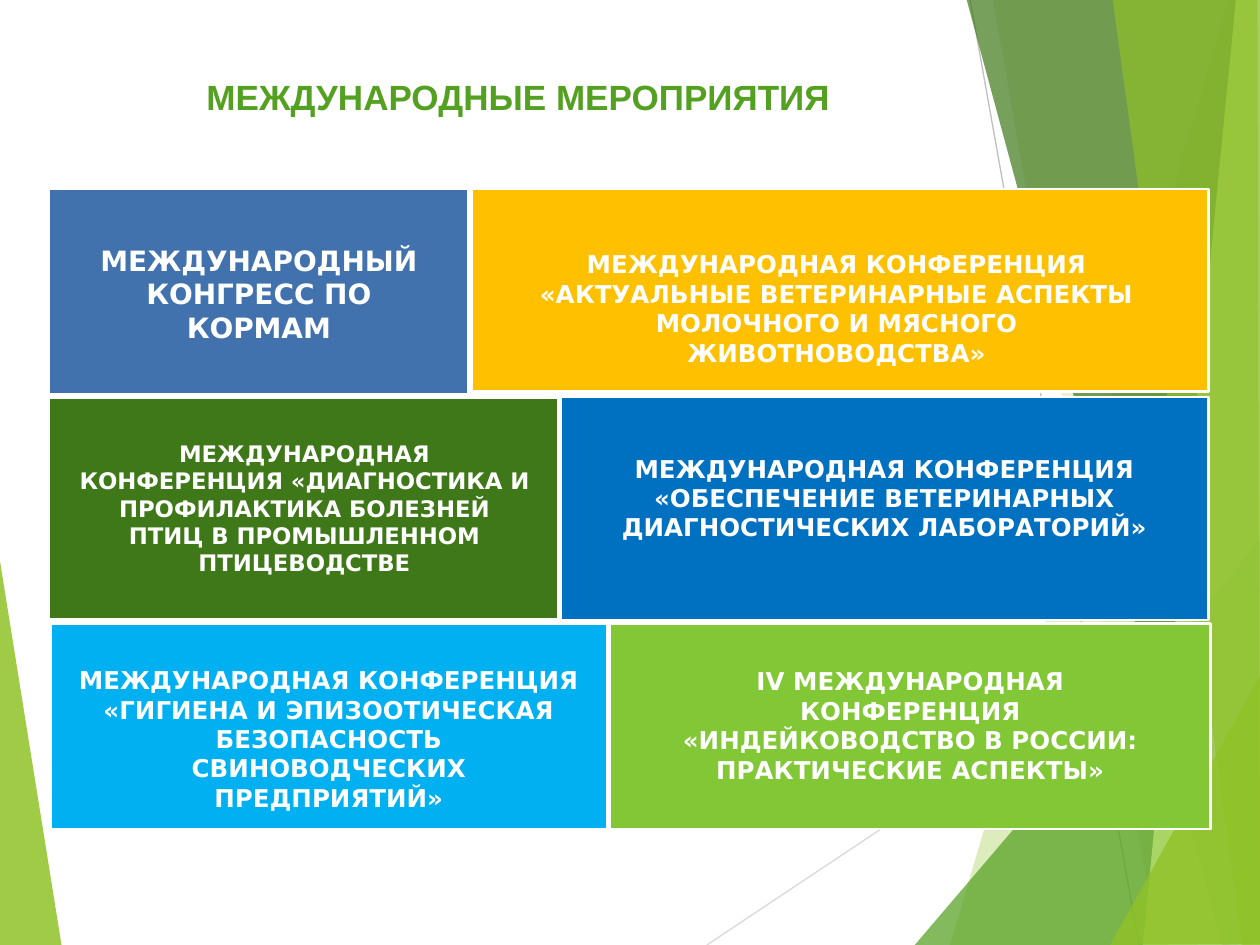
import pptx
import pptx.util
import pptx.dml.color
import pptx.enum.shapes
import pptx.enum.text
import pptx.oxml
import pptx.oxml.ns

Inches = pptx.util.Inches
Pt = pptx.util.Pt
rgb = pptx.dml.color.RGBColor.from_string

THEME = {
    "white": "FFFFFF", "lime": "90C226", "green": "54A021", "forest": "3F7819",
    "pale": "C0E474", "grass": "82C836", "steel": "4172AD", "amber": "FFC000",
    "blue": "0070C0", "sky": "00B0F0", "ray": "D9D9D9", "dark_ray": "BFBFBF",
    "title_font": "Arial", "card_font": "DejaVu Sans",
    "title": 20, "large": 16, "body": 14, "small": 13,
}

deck = pptx.Presentation()
deck.slide_width, deck.slide_height = Inches(10), Inches(7.5)
slide = deck.slides.add_slide(deck.slide_layouts[6])


def add_facet(color, opacity, points):
    (start_x, start_y), *corners = [(Inches(x), Inches(y)) for x, y in points]
    outline = slide.shapes.build_freeform(start_x, start_y)
    outline.add_line_segments(corners, close=True)
    facet = outline.convert_to_shape()
    facet.shadow.inherit = False
    facet.line.fill.background()
    facet.fill.solid()
    facet.fill.fore_color.rgb = rgb(THEME[color])
    tint = facet.fill._xPr.find(".//" + pptx.oxml.ns.qn("a:srgbClr"))
    alpha = pptx.oxml.parse_xml(f'<a:alpha {pptx.oxml.ns.nsdecls("a")} val="{opacity * 1000}"/>')
    tint.append(alpha)


def add_text(words, box, font, size, color, align):
    frame = slide.shapes.add_textbox(*map(Inches, box)).text_frame
    frame.word_wrap = True
    frame.paragraphs[0].alignment = align
    run = frame.paragraphs[0].add_run()
    run.text = words
    run.font.name = THEME[font]
    run.font.size = Pt(THEME[size])
    run.font.bold = True
    run.font.color.rgb = rgb(THEME[color])


add_facet("lime", 85, [(-0.01, 4.39), (0.49, 7.51), (-0.01, 7.5)])

rays = [("ray", (5.61, 7.5, 10.01, 4.57)), ("dark_ray", (7.7, 0, 9.04, 7.5))]
for color, ends in rays:
    ray = slide.shapes.add_connector(
        pptx.enum.shapes.MSO_CONNECTOR.STRAIGHT, *map(Inches, ends))
    ray.line.color.rgb = rgb(THEME[color])
    ray.line.width = Pt(0.75)
    ray._element.spPr.append(
        pptx.oxml.parse_xml(f'<a:effectLst {pptx.oxml.ns.nsdecls("a")}/>'))

right_facets = [
    ("lime", 30, [(9.75, 0), (7.54, 7.5), (10.02, 7.51), (10.01, 0.01)]),
    ("lime", 20, [(7.88, -0.01), (9.19, 7.5), (10.01, 7.5), (10.01, -0.01)]),
    ("green", 72, [(7.26, 7.5), (10, 4.29), (10.01, 7.5)]),
    ("forest", 70, [(7.67, -0.01), (9.7, 7.5), (10.01, 7.49), (10.01, -0.01)]),
    ("pale", 70, [(9.81, -0.01), (9.07, 7.5), (10.01, 7.5), (10, -0.01)]),
    ("lime", 65, [(8.83, -0.01), (9.86, 7.5), (10, 7.5), (9.98, -0.01)]),
    ("lime", 80, [(8.81, 7.5), (10.01, 5.35), (10.01, 7.49)]),
]
for color, opacity, points in right_facets:
    add_facet(color, opacity, points)

add_text("МЕЖДУНАРОДНЫЕ МЕРОПРИЯТИЯ", (1.54, 0.55, 7.08, 1.25),
         "title_font", "title", "green", pptx.enum.text.PP_ALIGN.LEFT)

events = [
    ("blue", (4.45, 3.15, 5.14, 1.77), "body", (4.81, 3.55, 4.42, 0.81),
     "МЕЖДУНАРОДНАЯ КОНФЕРЕНЦИЯ «ОБЕСПЕЧЕНИЕ ВЕТЕРИНАРНЫХ ДИАГНОСТИЧЕСКИХ ЛАБОРАТОРИЙ»"),
    ("amber", (3.74, 1.5, 5.85, 1.61), "body", (3.89, 1.93, 5.5, 0.81),
     "МЕЖДУНАРОДНАЯ КОНФЕРЕНЦИЯ «АКТУАЛЬНЫЕ ВЕТЕРИНАРНЫЕ АСПЕКТЫ МОЛОЧНОГО И МЯСНОГО ЖИВОТНОВОДСТВА»"),
    ("forest", (0.39, 3.16, 4.04, 1.76), "small", (0.53, 3.44, 3.77, 1.19),
     "МЕЖДУНАРОДНАЯ КОНФЕРЕНЦИЯ «ДИАГНОСТИКА И ПРОФИЛАКТИКА БОЛЕЗНЕЙ ПТИЦ В ПРОМЫШЛЕННОМ ПТИЦЕВОДСТВЕ"),
    ("steel", (0.39, 1.5, 3.33, 1.63), "large", (0.57, 1.88, 2.97, 0.91),
     "МЕЖДУНАРОДНЫЙ КОНГРЕСС ПО КОРМАМ"),
    ("sky", (0.4, 4.95, 4.42, 1.63), "body", (0.49, 5.23, 4.24, 1.04),
     "МЕЖДУНАРОДНАЯ КОНФЕРЕНЦИЯ «ГИГИЕНА И ЭПИЗООТИЧЕСКАЯ БЕЗОПАСНОСТЬ СВИНОВОДЧЕСКИХ ПРЕДПРИЯТИЙ»"),
    ("grass", (4.84, 4.95, 4.77, 1.63), "body", (5.14, 5.24, 4.17, 1.04),
     "IV МЕЖДУНАРОДНАЯ КОНФЕРЕНЦИЯ «ИНДЕЙКОВОДСТВО В РОССИИ: ПРАКТИЧЕСКИЕ АСПЕКТЫ»"),
]
for color, card_box, size, text_box, words in events:
    card = slide.shapes.add_shape(
        pptx.enum.shapes.MSO_SHAPE.RECTANGLE, *map(Inches, card_box))
    card.shadow.inherit = False
    card.fill.solid()
    card.fill.fore_color.rgb = rgb(THEME[color])
    card.line.color.rgb = rgb(THEME["white"])
    card.line.width = Pt(1.5)
    add_text(words, text_box, "card_font", size, "white",
             pptx.enum.text.PP_ALIGN.CENTER)

deck.save("out.pptx")
